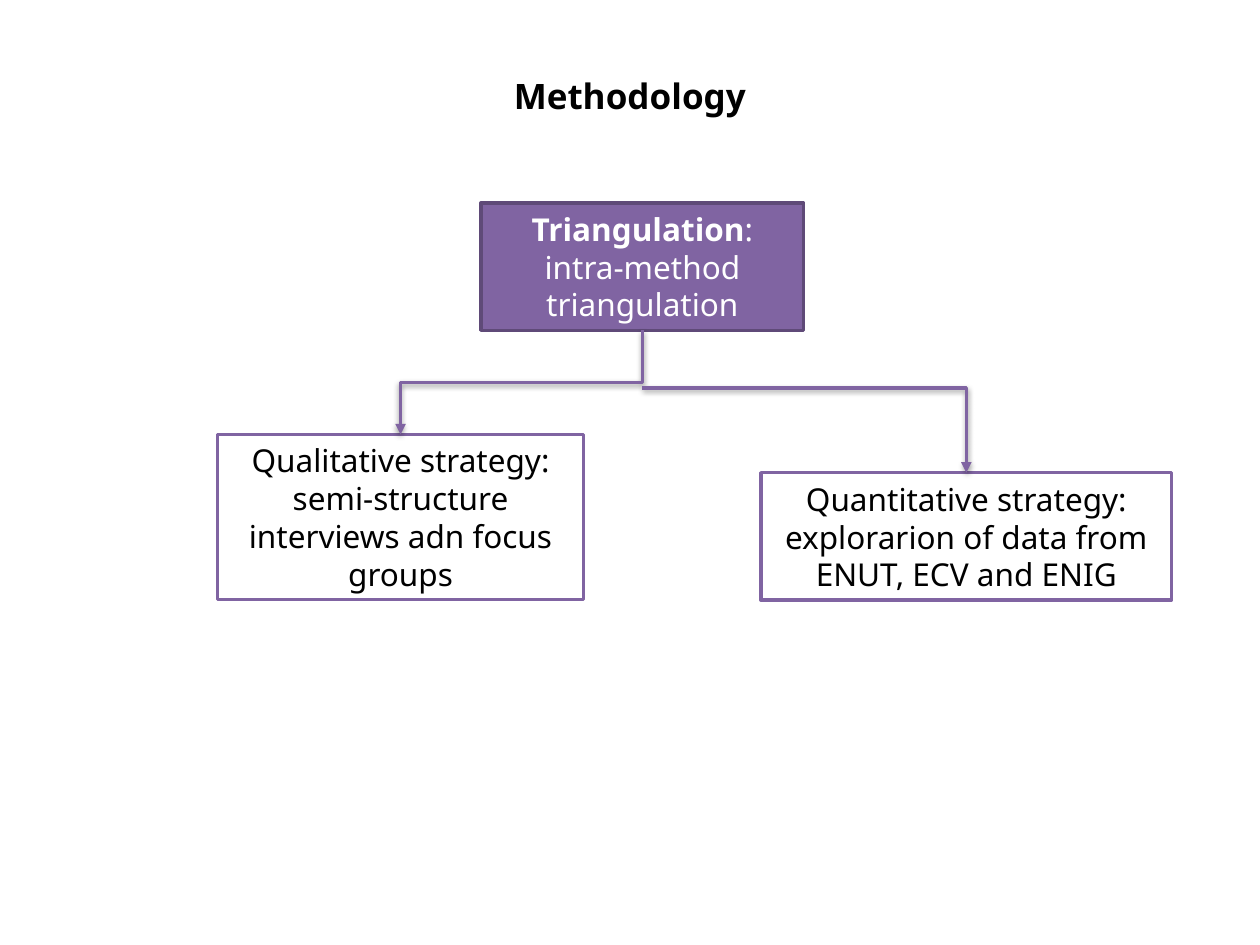
from lxml import etree
from pptx import Presentation
from pptx.dml.color import RGBColor
from pptx.enum.shapes import MSO_CONNECTOR, MSO_SHAPE
from pptx.enum.text import MSO_ANCHOR, PP_ALIGN
from pptx.oxml import parse_xml
from pptx.oxml.ns import nsdecls, qn
from pptx.util import Cm, Pt

ELBOW, RECT = MSO_CONNECTOR.ELBOW, MSO_SHAPE.RECTANGLE
MIDDLE, CENTER = MSO_ANCHOR.MIDDLE, PP_ALIGN.CENTER
COLORS = {"purple": "8064A2", "dark": "5F4A78", "white": "FFFFFF", "black": "000000"}
FONT = "Noto Sans"

TITLE_BOX = (10.06, 1.37, 5.28, 1.12)
ROOT_BOX = (9.7, 4.09, 6.5, 2.57)
QUALITATIVE_BOX = (4.39, 8.76, 7.37, 3.33)
QUANTITATIVE_BOX = (15.34, 9.53, 8.28, 2.57)
BRANCH_Y = 7.82


def color(name):
    return RGBColor.from_string(COLORS[name])


def write(tf, runs, size, ink):
    """Fill a text frame with one centred paragraph of (text, bold) runs."""
    p = tf.paragraphs[0]
    p.alignment = CENTER
    for text, bold in runs:
        r = p.add_run()
        r.text = text
        for key, value in {"name": FONT, "size": Pt(size), "bold": bold}.items():
            setattr(r.font, key, value)
        r.font.color.rgb = color(ink)


def add_title(s, box, text):
    tf = s.shapes.add_textbox(*map(Cm, box)).text_frame
    tf.word_wrap = False
    write(tf, [(text, True)], 20, "black")


def add_box(s, box, runs, fill="white", line="purple", ink="black"):
    sp = s.shapes.add_shape(RECT, *map(Cm, box))
    sp.shadow.inherit = False
    sp.fill.solid()
    sp.fill.fore_color.rgb = color(fill)
    sp.line.color.rgb = color(line)
    sp.line.width = Pt(2)
    tf = sp.text_frame
    tf.word_wrap = True
    tf.vertical_anchor = MIDDLE
    write(tf, runs, 18, ink)


def add_arrow(s, start, end, preset, turned=False):
    """Draw an elbow arrow; a turned one leaves its start vertically."""
    (x1, y1), (x2, y2) = start, end
    if turned:
        cx, cy = (x1 + x2) / 2, (y1 + y2) / 2
        dx, dy = (y2 - y1) / 2, (x1 - x2) / 2
        x1, y1, x2, y2 = cx - dx, cy - dy, cx + dx, cy + dy
    cxn = s.shapes.add_connector(ELBOW, *map(Cm, (x1, y1, x2, y2)))
    cxn.line.color.rgb = color("purple")
    cxn.line.width = Pt(2)
    sp_pr = cxn._element.spPr
    sp_pr.find(qn("a:prstGeom")).set("prst", preset)
    if turned:
        sp_pr.find(qn("a:xfrm")).set("rot", "5400000")
    etree.SubElement(sp_pr.find(qn("a:ln")), qn("a:tailEnd"), type="triangle")
    sp_pr.append(parse_xml(
        f'<a:effectLst {nsdecls("a")}>'
        '<a:outerShdw blurRad="40000" dist="20000" dir="5400000" rotWithShape="0">'
        f'<a:srgbClr val="{COLORS["black"]}"><a:alpha val="38000"/></a:srgbClr>'
        '</a:outerShdw></a:effectLst>'))


def top_center(box):
    return box[0] + box[2] / 2, box[1]


def add_methodology(s):
    add_title(s, TITLE_BOX, "Methodology")
    add_box(s, ROOT_BOX,
            [("Triangulation", True), (": intra-method triangulation", False)],
            "purple", "dark", "white")
    add_box(s, QUALITATIVE_BOX,
            [("Qualitative strategy: semi-structure interviews adn focus groups", False)])
    add_box(s, QUANTITATIVE_BOX,
            [("Quantitative strategy: explorarion of data from ENUT, ECV and ENIG", False)])
    trunk_x, root_top = top_center(ROOT_BOX)
    add_arrow(s, (trunk_x, root_top + ROOT_BOX[3]), top_center(QUALITATIVE_BOX),
              "bentConnector3", turned=True)
    add_arrow(s, (trunk_x, BRANCH_Y), top_center(QUANTITATIVE_BOX), "bentConnector2")


def main():
    prs = Presentation()
    prs.slide_width, prs.slide_height = Cm(25.4), Cm(19.05)
    add_methodology(prs.slides.add_slide(prs.slide_layouts[6]))
    prs.save("out.pptx")


if __name__ == "__main__":
    main()
